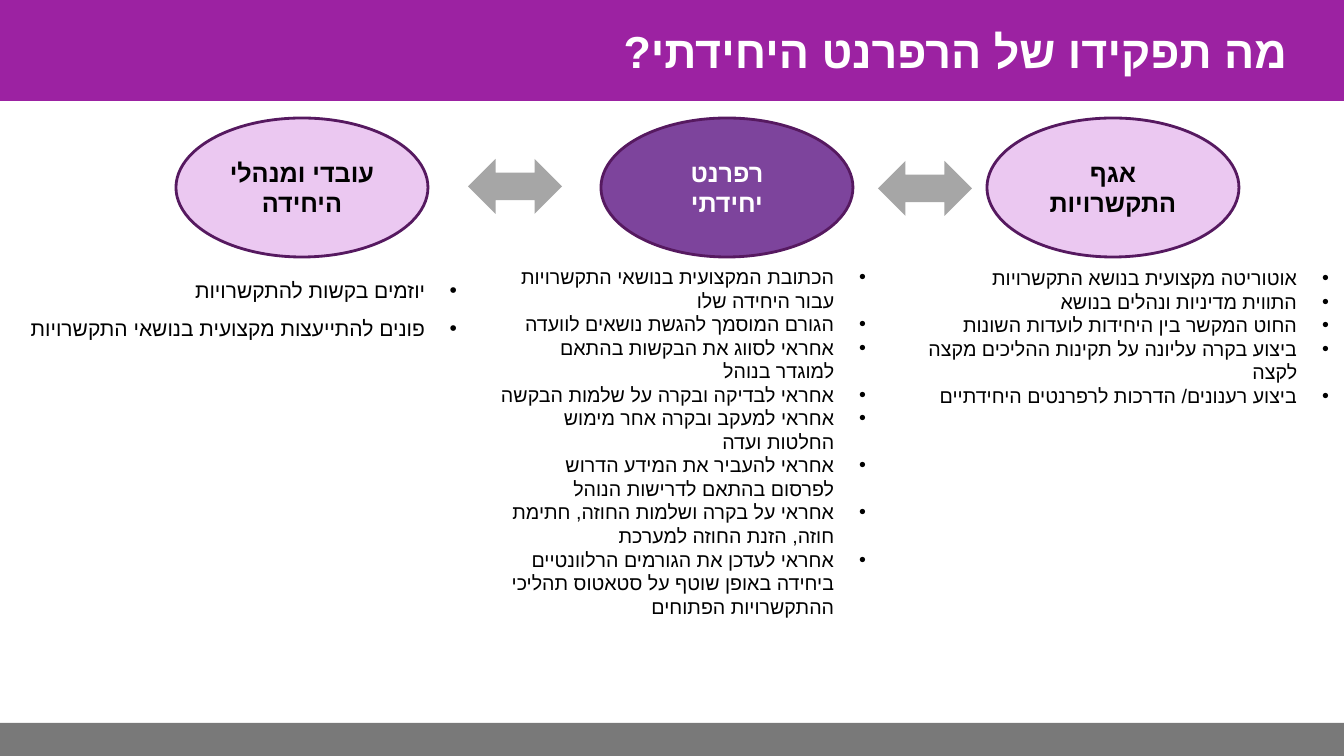
import pptx
import pptx.util
import pptx.dml.color
import pptx.enum.shapes
import pptx.enum.text
import pptx.oxml.ns
import lxml.etree

TITLE = "מה תפקידו של הרפרנט היחידתי?"
WIDE, HIGH = 1344, 756
COLORS = {
    "band": "9C22A2", "foot": "797979", "arrow": "A6A6A6", "edge": "561960",
    "dark": "7D449C", "light": "EBC8F1", "white": "FFFFFF", "black": "000000",
}
# Left to right: oval x, oval fill, oval text colour, heading, list box, size, spacing, items
ROLES = [
    (176, "light", "black", ["עובדי ומנהלי היחידה"], (-42, 260, 509, 201), 15, 1.5, [
        "יוזמים בקשות להתקשרויות",
        "פונים להתייעצות מקצועית בנושאי התקשרויות",
    ]),
    (601, "dark", "white", ["רפרנט", "יחידתי"], (487, 260, 389, 437), 14, 1.0, [
        "הכתובת המקצועית בנושאי התקשרויות עבור היחידה שלו",
        "הגורם המוסמך להגשת נושאים לוועדה",
        "אחראי לסווג את הבקשות בהתאם למוגדר בנוהל",
        "אחראי לבדיקה ובקרה על שלמות הבקשה",
        "אחראי למעקב ובקרה אחר מימוש החלטות ועדה",
        "אחראי להעביר את המידע הדרוש לפרסום בהתאם לדרישות הנוהל",
        "אחראי על בקרה ושלמות החוזה, חתימת חוזה, הזנת החוזה למערכת",
        "אחראי לעדכן את הגורמים הרלוונטיים ביחידה באופן שוטף על סטאטוס "
        "תהליכי ההתקשרויות הפתוחים",
    ]),
    (987, "light", "black", ["אגף התקשרויות"], (888, 261, 451, 248), 14, 1.0, [
        "אוטוריטה מקצועית בנושא התקשרויות",
        "התווית מדיניות ונהלים בנושא",
        "החוט המקשר בין היחידות לועדות השונות",
        "ביצוע בקרה עליונה על תקינות ההליכים מקצה לקצה",
        "ביצוע רענונים/ הדרכות לרפרנטים היחידתיים",
    ]),
]
ARROWS = [(468, 159), (878, 161)]

KIND = pptx.enum.shapes.MSO_SHAPE
ALIGN = pptx.enum.text.PP_ALIGN
ANCHOR = pptx.enum.text.MSO_ANCHOR
qn = pptx.oxml.ns.qn


def px(n):
    return pptx.util.Emu(round(n * 12192000 / WIDE))


def rgb(name):
    return pptx.dml.color.RGBColor.from_string(COLORS[name])


def place(shape, box):
    shape.left, shape.top, shape.width, shape.height = map(px, box)


def draw(slide, kind, box, fill, edge=None):
    shape = slide.shapes.add_shape(kind, *map(px, box))
    shape.shadow.inherit = False
    shape.fill.solid()
    shape.fill.fore_color.rgb = rgb(fill)
    if edge:
        shape.line.color.rgb = rgb(edge)
        shape.line.width = pptx.util.Pt(2)
    else:
        shape.line.fill.background()
    return shape


def write(shape, lines, size, color, align, anchor, bold=True, space=1.0):
    """Fill a shape with right-to-left paragraphs."""
    frame = shape.text_frame
    frame.text = "\n".join(lines)
    frame.word_wrap = True
    frame.auto_size = pptx.enum.text.MSO_AUTO_SIZE.NONE
    frame.vertical_anchor = anchor
    for para in frame.paragraphs:
        para.alignment = align
        para.line_spacing = space
        para.space_before = pptx.util.Pt(0)
        para._p.get_or_add_pPr().set("rtl", "1")
        for run in para.runs:
            font = run.font
            font.name, font.size, font.bold = "Arial", pptx.util.Pt(size), bold
            font.color.rgb = rgb(color)
            script = lxml.etree.SubElement(run._r.get_or_add_rPr(), qn("a:cs"))
            script.set("typeface", "Arial")


def bullet(shape):
    for para in shape.text_frame.paragraphs:
        props = para._p.get_or_add_pPr()
        props.set("marL", "285750")
        props.set("indent", "-285750")
        face = lxml.etree.SubElement(props, qn("a:buFont"))
        face.set("typeface", "Arial")
        mark = lxml.etree.SubElement(props, qn("a:buChar"))
        mark.set("char", "•")


def main():
    deck = pptx.Presentation()
    deck.slide_width, deck.slide_height = px(WIDE), px(HIGH)
    slide = deck.slides.add_slide(deck.slide_layouts[4])
    title, *bodies = slide.placeholders
    spare = bodies.pop()
    spare._element.getparent().remove(spare._element)

    for box, fill in [((0, 0, WIDE, 101), "band"), ((0, 723, WIDE, 33), "foot")]:
        band = draw(slide, KIND.RECTANGLE, box, fill)
        slide.shapes._spTree.insert(2, band._element)

    place(title, (46, 7, 1252, 88))
    write(title, [TITLE], 32, "white", ALIGN.RIGHT, ANCHOR.MIDDLE)

    for body, role in zip(bodies, ROLES):
        x, fill, ink, head, box, size, space, items = role
        oval = draw(slide, KIND.OVAL, (x, 118, 252, 139), fill, "edge")
        write(oval, head, 18, ink, ALIGN.CENTER, ANCHOR.MIDDLE)
        place(body, box)
        write(body, items, size, "black", ALIGN.RIGHT, ANCHOR.TOP, False, space)
        bullet(body)

    for x, y in ARROWS:
        draw(slide, KIND.LEFT_RIGHT_ARROW, (x, y, 94, 55), "arrow")

    deck.save("out.pptx")


if __name__ == "__main__":
    main()
